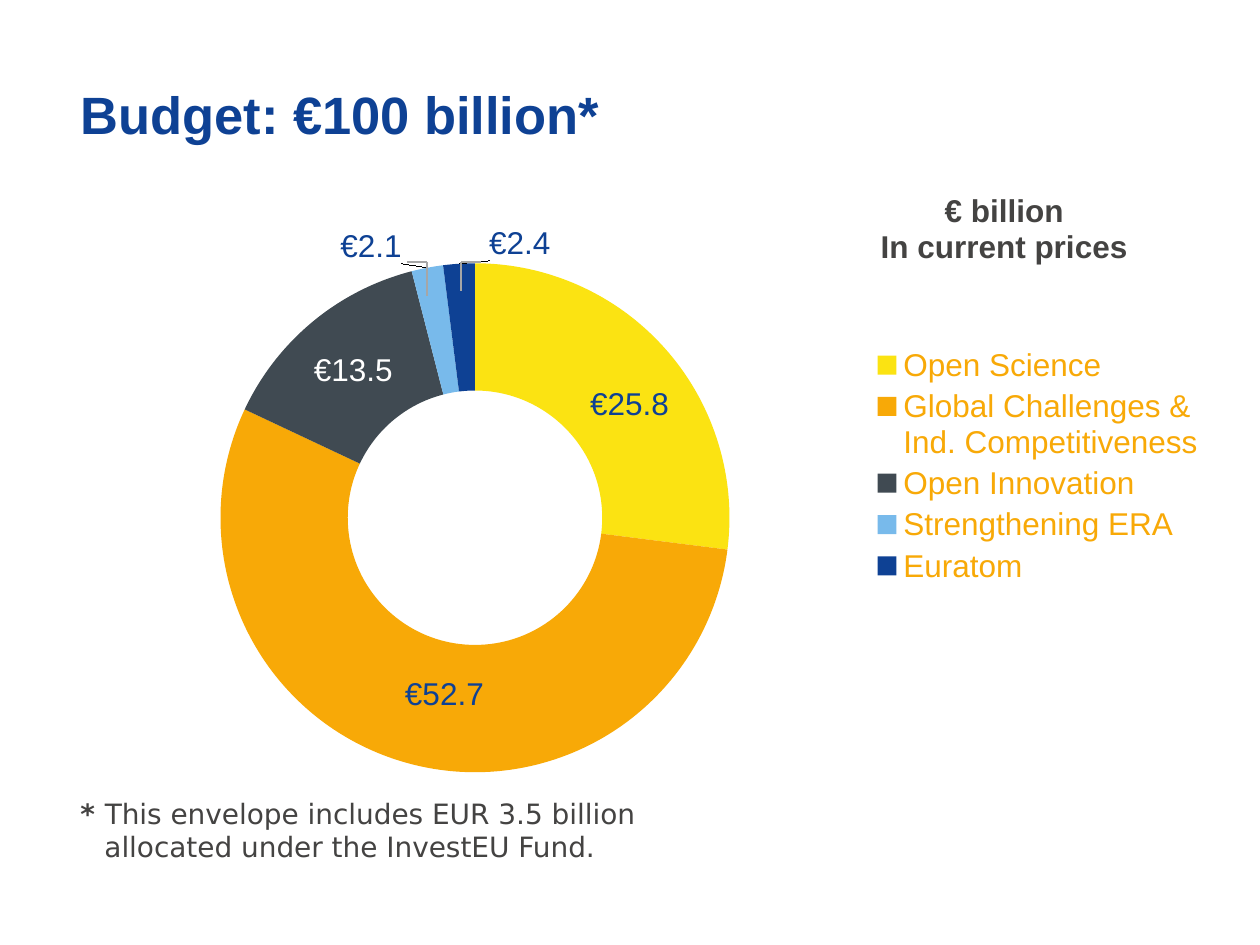
from lxml import etree
from pptx import Presentation
from pptx.chart.data import CategoryChartData
from pptx.dml.color import RGBColor
from pptx.enum.chart import XL_CHART_TYPE, XL_LEGEND_POSITION
from pptx.enum.shapes import MSO_CONNECTOR
from pptx.oxml.ns import qn
from pptx.util import Inches, Pt

DOUGHNUT = XL_CHART_TYPE.DOUGHNUT
LEGEND_RIGHT = XL_LEGEND_POSITION.RIGHT
STRAIGHT = MSO_CONNECTOR.STRAIGHT

BLUE, ORANGE, GREY, WHITE = "0E4194", "F8A907", "444342", "FFFFFF"
LEADER_GREY = "A6A6A6"

CHART_AREA = (0.67, 1.13, 9.02, 5.14)

# Name, share of the total in percent, label, fill, label colour, label offset
BUDGET = [
    ("Open Science", 27, "€25.8", "FBE312", BLUE, {"x": 0.01, "y": 0.02}),
    ("Global Challenges & Ind. Competitiveness", 55, "€52.7", ORANGE, BLUE,
     {"x": 0.02, "y": -0.01}),
    ("Open Innovation", 14, "€13.5", "404A52", WHITE, None),
    ("Strengthening ERA", 2, "€2.1", "78BAEB", BLUE, {"x": -0.06, "y": -0.13}),
    ("Euratom", 2, "€2.4", BLUE, BLUE, {"x": 0.05, "y": -0.13}),
]


def colour(value):
    return RGBColor.from_string(value)


def style_font(font, size, hex_colour, name="Arial", bold=False):
    values = {"size": Pt(size), "name": name, "bold": bold}
    for key, value in values.items():
        setattr(font, key, value)
    font.color.rgb = colour(hex_colour)


def add_text(page, area, spans, size, hex_colour, font_name, indent):
    """Add a box with one paragraph; indent is (left margin, first line)."""
    box = page.shapes.add_textbox(*map(Inches, area))
    frame = box.text_frame
    frame.word_wrap = True
    para = frame.paragraphs[0]
    properties = para._p.get_or_add_pPr()
    for key, value in zip(("marL", "indent"), indent):
        properties.set(key, str(Inches(value)))
    for text, bold in spans:
        span = para.add_run()
        span.text = text
        style_font(span.font, size, hex_colour, font_name, bold)


def chart_shares(left, top, width=None, height=None):
    """Turn inches on the slide into shares of the chart."""
    chart_left, chart_top, chart_width, chart_height = CHART_AREA
    shares = {"xMode": "edge", "yMode": "edge",
              "x": (left - chart_left) / chart_width,
              "y": (top - chart_top) / chart_height}
    if width:
        shares.update(w=width / chart_width, h=height / chart_height)
    return shares


def set_layout(parent, after, values):
    """Place a chart part by shares of the chart, behind its child 'after'."""
    for old in parent.findall(qn("c:layout")):
        parent.remove(old)
    layout = etree.Element(qn("c:layout"))
    manual = etree.SubElement(layout, qn("c:manualLayout"))
    for key, value in values.items():
        etree.SubElement(manual, qn("c:" + key)).set("val", str(value))
    position = parent.index(parent.find(qn(after))) + 1 if after else 0
    parent.insert(position, layout)


def style_slices(series):
    for index, (_, _, label, fill, label_colour, offset) in enumerate(BUDGET):
        point = series.points[index]
        point.format.fill.solid()
        point.format.fill.fore_color.rgb = colour(fill)
        point.format.line.fill.background()
        para = point.data_label.text_frame.paragraphs[0]
        span = para.add_run()
        span.text = label
        style_font(span.font, 18, label_colour)
        if offset:
            label_xml = series.data_labels._element.findall(qn("c:dLbl"))[index]
            set_layout(label_xml, "c:idx", offset)


def add_budget_chart(page):
    data = CategoryChartData()
    data.categories = [row[0] for row in BUDGET]
    data.add_series("Series 1", [row[1] for row in BUDGET])
    chart = page.shapes.add_chart(DOUGHNUT, *map(Inches, CHART_AREA), data).chart
    style_font(chart.font, 18, ORANGE)
    chart.plots[0].vary_by_categories = True

    # Ring and its labels
    series = chart.plots[0].series[0]
    series.data_labels.show_percentage = True
    style_font(series.data_labels.font, 18, WHITE)
    style_slices(series)
    ring = {"layoutTarget": "inner", **chart_shares(1.75, 2.09, 4.04, 4.04)}
    set_layout(chart._chartSpace.chart.plotArea, None, ring)

    # Chart title
    chart.has_title = True
    title = chart.chart_title
    title.text_frame.text = "€ billion\nIn current prices"
    for para in title.text_frame.paragraphs:
        style_font(para.runs[0].font, 18, GREY, bold=True)
    set_layout(title._element, "c:tx", chart_shares(6.96, 1.49))

    # Legend
    chart.has_legend = True
    chart.legend.position = LEGEND_RIGHT
    chart.legend.include_in_layout = False
    style_font(chart.legend.font, 18, ORANGE)
    set_layout(chart.legend._element, "c:legendPos", chart_shares(6.88, 2.71, 2.71, 1.97))


def add_line(page, *ends):
    line = page.shapes.add_connector(STRAIGHT, *map(Inches, ends))
    line.line.color.rgb = colour(LEADER_GREY)
    line.line.width = Pt(1.5)
    etree.SubElement(line._element.spPr, qn("a:effectLst"))


def add_leader(page, corner, end, bottom, top=2.08):
    """Draw an angled leader from a label down into its slice."""
    add_line(page, min(corner, end), top, max(corner, end), top)
    add_line(page, corner, top, corner, bottom)


def main():
    deck = Presentation()
    deck.slide_width, deck.slide_height = Inches(10), Inches(7.5)
    page = deck.slides.add_slide(deck.slide_layouts[6])

    # Heading
    add_text(page, (0.54, 0.6, 8.44, 0.79), [("Budget: €100 billion*", True)],
             30, BLUE, "Arial", (0.39, -0.39))

    add_budget_chart(page)

    # Footnote
    note = "This envelope includes EUR 3.5 billion allocated under the InvestEU Fund."
    add_text(page, (0.34, 6.27, 5.21, 0.91), [("* ", True), (note, False)],
             16, GREY, "DejaVu Sans", (0.39, -0.19))

    # Leaders to the two thin slices
    add_leader(page, 3.66, 3.82, 2.31)
    add_leader(page, 3.39, 3.23, 2.35)

    deck.save("out.pptx")


if __name__ == "__main__":
    main()
